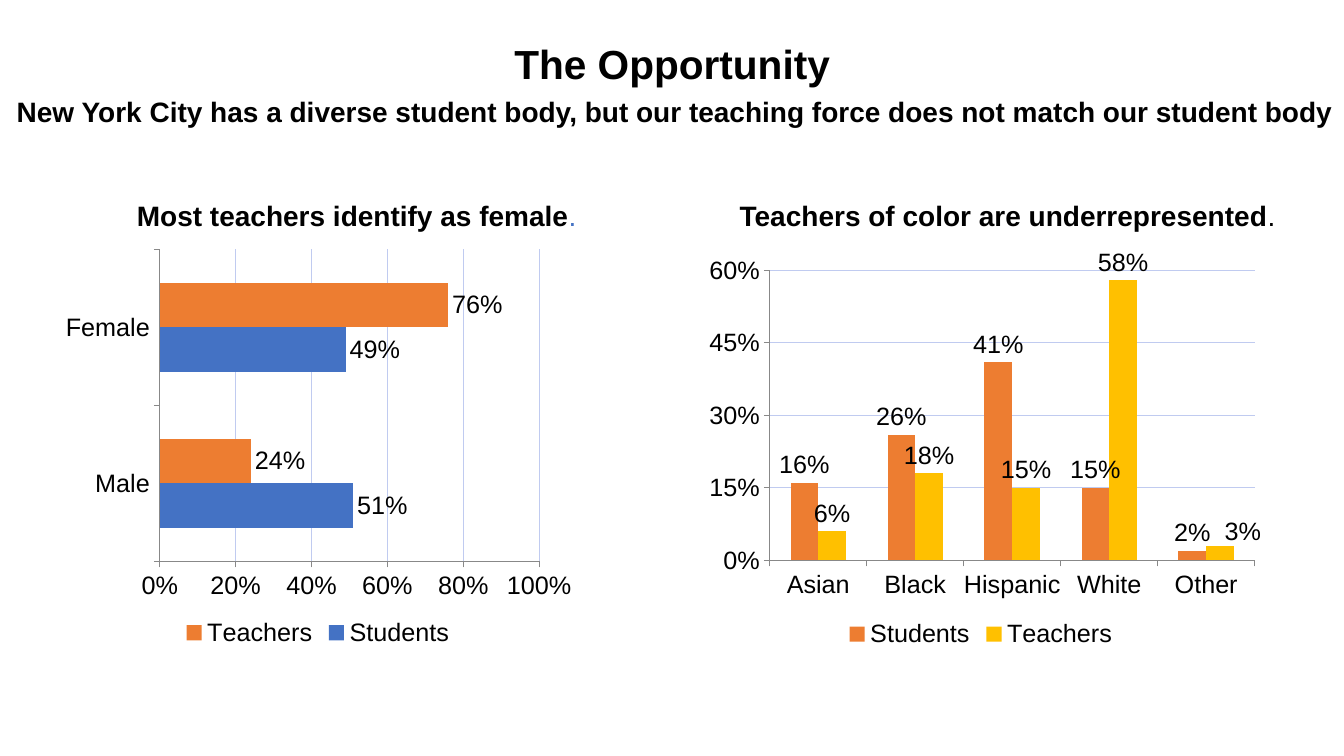
from lxml import etree
from pptx import Presentation
from pptx.chart.data import CategoryChartData
from pptx.dml.color import RGBColor
from pptx.enum.chart import XL_CHART_TYPE, XL_LABEL_POSITION, XL_LEGEND_POSITION, XL_TICK_MARK
from pptx.enum.text import MSO_ANCHOR, PP_ALIGN
from pptx.oxml.ns import qn
from pptx.util import Cm, Pt

BAR, COLUMN = XL_CHART_TYPE.BAR_CLUSTERED, XL_CHART_TYPE.COLUMN_CLUSTERED
OUTSIDE_END = XL_LABEL_POSITION.OUTSIDE_END
BOTTOM = XL_LEGEND_POSITION.BOTTOM
TICK_OUT, TICK_NONE = XL_TICK_MARK.OUTSIDE, XL_TICK_MARK.NONE
MIDDLE, TOP = MSO_ANCHOR.MIDDLE, MSO_ANCHOR.TOP
CENTER, LEFT = PP_ALIGN.CENTER, PP_ALIGN.LEFT

BLACK = RGBColor(0x00, 0x00, 0x00)
BLUE = RGBColor(0x44, 0x72, 0xC4)
ORANGE = RGBColor(0xED, 0x7D, 0x31)
GOLD = RGBColor(0xFF, 0xC0, 0x00)
AXIS_GRAY = RGBColor(0x88, 0x88, 0x88)
GRID_BLUE = RGBColor(0xC0, 0xCB, 0xF0)
FONT = "Arial"


def style_font(font, size, bold=False):
    font.name = FONT
    font.size = Pt(size)
    font.bold = bold
    font.color.rgb = BLACK


def manual_layout(**settings):
    layout = etree.Element(qn("c:layout"))
    manual = etree.SubElement(layout, qn("c:manualLayout"))
    for tag, value in settings.items():
        etree.SubElement(manual, qn(f"c:{tag}")).set("val", str(value))
    return layout


prs = Presentation()
prs.slide_width, prs.slide_height = Cm(33.87), Cm(19.05)
slide = prs.slides.add_slide(prs.slide_layouts[6])

# Charts: type, box in cm, axis top and step, plot area (x, y, w, h), categories, series
charts = [
    (BAR, (1.37, 6.07, 13.28, 10.36), 1, 0.2, (0.2, 0.02, 0.72, 0.76),
     ["Male", "Female"],
     [("Students", (0.51, 0.49), BLUE), ("Teachers", (0.24, 0.76), ORANGE)]),
    (COLUMN, (17.53, 6.25, 14.38, 10.21), 0.6, 0.15, (0.13, 0.05, 0.85, 0.72),
     ["Asian", "Black", "Hispanic", "White", "Other"],
     [("Students", (0.16, 0.26, 0.41, 0.15, 0.02), ORANGE),
      ("Teachers", (0.06, 0.18, 0.15, 0.58, 0.03), GOLD)]),
]
for kind, box, top_value, step, (x, y, w, h), categories, groups in charts:
    data = CategoryChartData(number_format="0%")
    data.categories = categories
    for name, shares, _ in groups:
        data.add_series(name, shares)
    chart = slide.shapes.add_chart(kind, *map(Cm, box), data).chart
    chart.has_title = False
    style_font(chart.font, 18)
    chart.has_legend = True
    chart.legend.position = BOTTOM
    chart.legend.include_in_layout = False
    style_font(chart.legend.font, 18)

    # Axes and gridlines
    shares_axis = chart.value_axis
    for axis in (chart.category_axis, shares_axis):
        axis.major_tick_mark, axis.minor_tick_mark = TICK_OUT, TICK_NONE
        axis.format.line.color.rgb = AXIS_GRAY
        axis.format.line.width = Pt(0.75)
        style_font(axis.tick_labels.font, 18)
    shares_axis.minimum_scale, shares_axis.maximum_scale = 0, top_value
    shares_axis.major_unit = step
    shares_axis.tick_labels.number_format = "0%"
    shares_axis.tick_labels.number_format_is_linked = False
    shares_axis.major_gridlines.format.line.color.rgb = GRID_BLUE
    shares_axis.major_gridlines.format.line.width = Pt(0.75)

    # Bars and their labels
    plot = chart.plots[0]
    plot.gap_width, plot.overlap, plot.vary_by_categories = 150, 0, False
    for series, (_, _, color) in zip(plot.series, groups):
        series.format.fill.solid()
        series.format.fill.fore_color.rgb = color
        series.invert_if_negative = False
        labels = series.data_labels
        labels.show_value = True
        labels.position = OUTSIDE_END
        labels.number_format, labels.number_format_is_linked = "0%", False
        style_font(labels.font, 18)

    # Fixed plot area
    plot_area = chart.element.find(".//" + qn("c:plotArea"))
    for auto_layout in plot_area.findall(qn("c:layout")):
        plot_area.remove(auto_layout)
    plot_area.insert(0, manual_layout(layoutTarget="inner", xMode="edge", yMode="edge",
                                      x=x, y=y, w=w, h=h))

# Last label of the ethnicity chart sits clear of its neighbour
other_label = plot.series[1].points[4].data_label
other_label.position = OUTSIDE_END
style_font(other_label.font, 18)
label_xml = chart.element.find(".//" + qn("c:dLbl"))
label_xml.insert(1, manual_layout(x=0.04, y=0.01))

# Headings: box in cm, size, alignment, anchor, line spacing, bold text, colour of the full stop
headings = [
    ((3.2, 4.72, 11.84, 2.74), 20, LEFT, TOP, 1.2, "Most teachers identify as female", BLUE),
    ((18.39, 4.72, 15.7, 2.41), 20, LEFT, TOP, 1.2,
     "Teachers of color are underrepresented", BLACK),
    ((0.03, 0.51, 33.83, 2.16), 29, CENTER, MIDDLE, 1, "The Opportunity", None),
    ((0.15, 2.26, 33.73, 1.12), 20, CENTER, TOP, 1,
     "New York City has a diverse student body, but our teaching force "
     "does not match our student body", None),
]
for box, size, align, anchor, spacing, words, stop_color in headings:
    frame = slide.shapes.add_textbox(*map(Cm, box)).text_frame
    frame.word_wrap = True
    frame.vertical_anchor = anchor
    heading = frame.paragraphs[0]
    heading.alignment, heading.line_spacing = align, spacing
    heading.add_run().text = words
    style_font(heading.font, size, bold=True)
    if stop_color is not None:
        stop = heading.add_run()
        stop.text = "."
        stop.font.bold = False
        stop.font.color.rgb = stop_color

prs.save("out.pptx")
